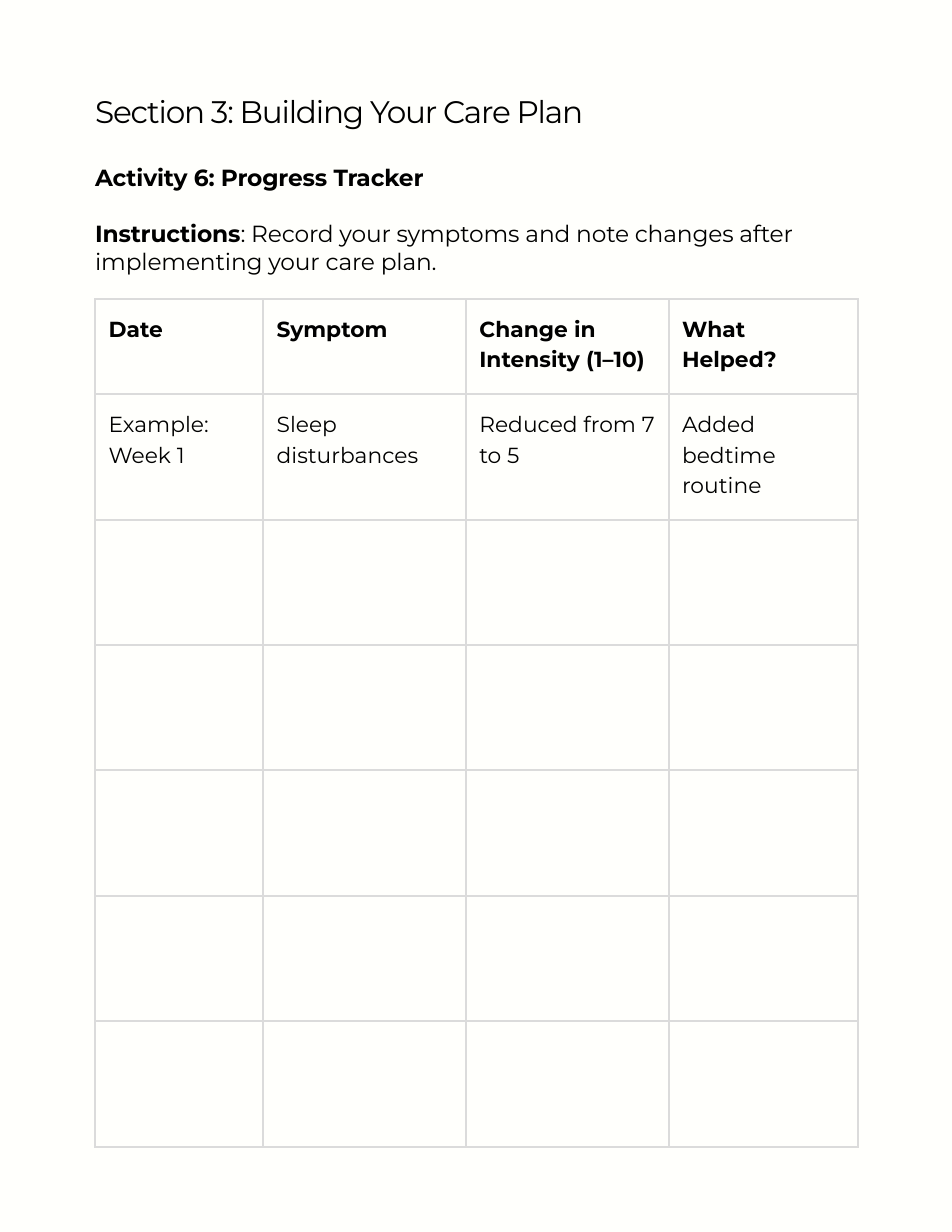
import pptx
import pptx.dml.color
import pptx.enum.text
import pptx.oxml
import pptx.oxml.ns
import pptx.util
from dataclasses import dataclass

Inches = pptx.util.Inches
Pt = pptx.util.Pt


@dataclass(frozen=True)
class Theme:
    font: str = "Montserrat"
    paper: str = "FFFFFC"
    ink: str = "000000"
    rule: str = "DBDBDB"
    rule_width: float = 1.5
    title_size: float = 20
    body_size: float = 15
    table_size: float = 14
    body_leading: float = 18
    table_leading: float = 19.6


THEME = Theme()
LEFT, CONTENT_WIDTH = 0.85, 6.8
CELL_MARGIN = 0.12
COLUMN_WIDTHS = [1.5, 1.81, 1.81, 1.69]
HEADER_HEIGHT, ENTRY_HEIGHT = 0.85, 1.12
HEADINGS = ["Date", "Symptom", "Change in Intensity (1–10)", "What Helped?"]
EXAMPLE = ["Example: Week 1", "Sleep disturbances", "Reduced from 7 to 5",
           "Added bedtime routine"]
EMPTY_ENTRIES = 5


def write(paragraph, text, *, size, leading, bold=False, tracking=0, before=0):
    """Append one formatted run; tracking is in points."""
    paragraph.line_spacing = Pt(leading)
    paragraph.space_before = Pt(before)
    run = paragraph.add_run()
    run.text = text
    run.font.name = THEME.font
    run.font.size = Pt(size)
    run.font.bold = bold
    run.font.color.rgb = pptx.dml.color.RGBColor.from_string(THEME.ink)
    if tracking:
        run.font._element.set("spc", str(round(tracking * 100)))


def add_text_area(slide, top, height):
    frame = slide.shapes.add_textbox(
        Inches(LEFT), Inches(top), Inches(CONTENT_WIDTH), Inches(height)).text_frame
    frame.word_wrap = True
    frame.auto_size = pptx.enum.text.MSO_AUTO_SIZE.SHAPE_TO_FIT_TEXT
    frame.margin_left = frame.margin_right = 0
    frame.margin_top = frame.margin_bottom = 0
    return frame


def rule_cell(cell):
    """Clear the fill and draw all four borders."""
    cell.fill.background()
    properties = cell._tc.get_or_add_tcPr()
    for position, side in enumerate("LRTB"):
        border = pptx.oxml.parse_xml(
            f'<a:ln{side} {pptx.oxml.ns.nsdecls("a")} w="{Pt(THEME.rule_width)}">'
            f'<a:solidFill><a:srgbClr val="{THEME.rule}"/></a:solidFill></a:ln{side}>')
        properties.insert(position, border)


def add_tracker(slide, top):
    entries = [HEADINGS, EXAMPLE] + [[""] * len(HEADINGS)] * EMPTY_ENTRIES
    heights = [HEADER_HEIGHT] + [ENTRY_HEIGHT] * (len(entries) - 1)
    tracker = slide.shapes.add_table(
        len(entries), len(HEADINGS), Inches(LEFT), Inches(top),
        Inches(sum(COLUMN_WIDTHS)), Inches(sum(heights))).table
    tracker.horz_banding = False
    for column, width in zip(tracker.columns, COLUMN_WIDTHS):
        column.width = Inches(width)
    for index, (row, height, entry) in enumerate(zip(tracker.rows, heights, entries)):
        row.height = Inches(height)
        for cell, text in zip(row.cells, entry):
            cell.margin_left = cell.margin_right = Inches(CELL_MARGIN)
            cell.margin_top = cell.margin_bottom = Inches(CELL_MARGIN)
            rule_cell(cell)
            if text:
                write(cell.text_frame.paragraphs[0], text, size=THEME.table_size,
                      leading=THEME.table_leading, bold=index == 0)


def main():
    workbook = pptx.Presentation()
    workbook.slide_width, workbook.slide_height = Inches(8.5), Inches(11)
    page = workbook.slides.add_slide(workbook.slide_layouts[6])
    page.background.fill.solid()
    page.background.fill.fore_color.rgb = pptx.dml.color.RGBColor.from_string(THEME.paper)

    # Section title
    section = add_text_area(page, 0.91, 0.27)
    write(section.paragraphs[0], "Section 3: Building Your Care Plan",
          size=THEME.title_size, leading=THEME.body_leading, tracking=-0.8)

    # Activity heading and instructions, one blank line's height apart
    activity = add_text_area(page, 1.46, 0.93)
    body = dict(size=THEME.body_size, leading=THEME.body_leading, tracking=-0.1)
    write(activity.paragraphs[0], "Activity 6: Progress Tracker", bold=True, **body)
    instructions = activity.add_paragraph()
    gap = THEME.body_leading
    write(instructions, "Instructions", bold=True, before=gap, **body)
    write(instructions, ": Record your symptoms and note changes after "
          "implementing your care plan.", before=gap, **body)

    # Progress table
    add_tracker(page, 2.67)

    workbook.save("out.pptx")


if __name__ == "__main__":
    main()
